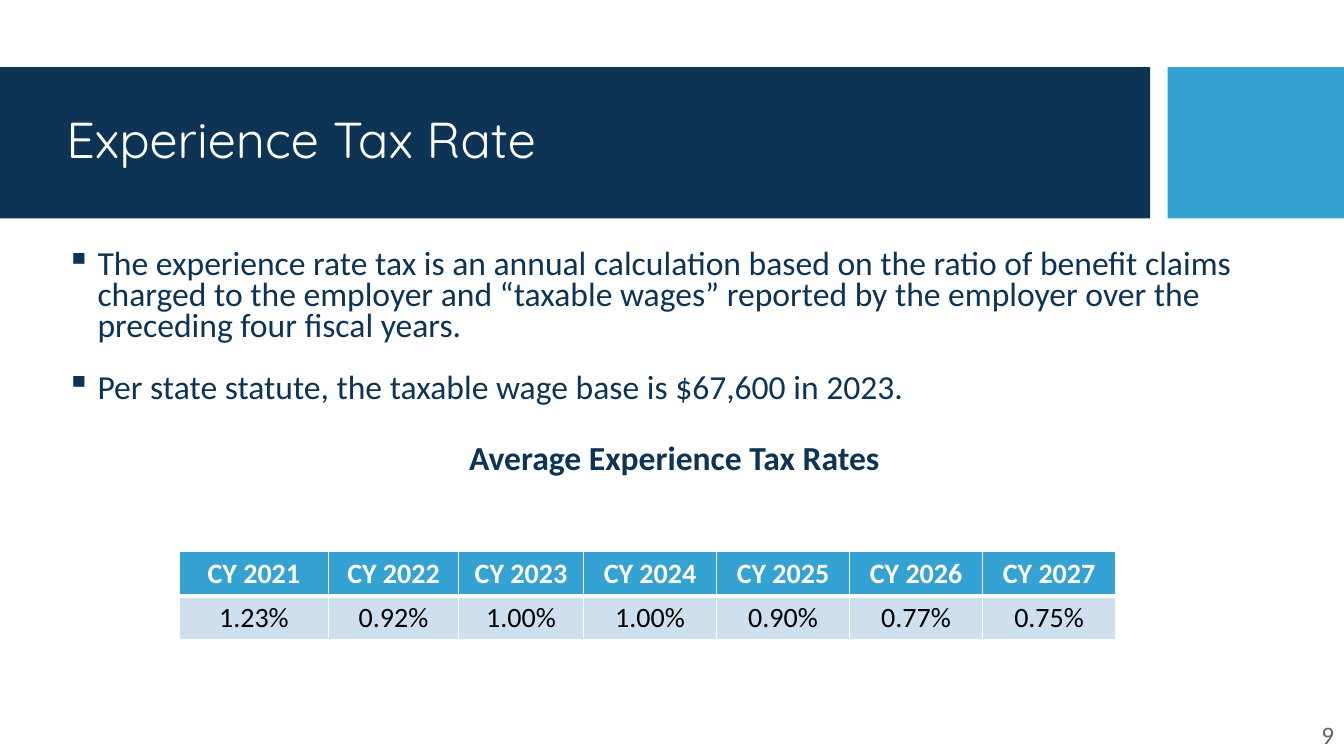
from lxml.etree import SubElement
from pptx import Presentation
from pptx.dml.color import RGBColor
from pptx.enum.shapes import MSO_SHAPE
from pptx.enum.text import MSO_ANCHOR, PP_ALIGN
from pptx.oxml.ns import qn
from pptx.util import Inches, Pt

NAVY = RGBColor(0x0D, 0x34, 0x55)
SKY = RGBColor(0x34, 0xA2, 0xD2)
PALE = RGBColor(0xCE, 0xE0, 0xEE)
GREY = RGBColor(0x66, 0x66, 0x66)
WHITE = RGBColor(0xFF, 0xFF, 0xFF)
BLACK = RGBColor(0x00, 0x00, 0x00)

COLUMNS, ROWS = 80, 45  # square grid, six units to the inch
LINE = Pt(22)
INDENT = Inches(0.31)

BULLETS = [
    "The experience rate tax is an annual calculation based on the ratio of benefit claims "
    "charged to the employer and “taxable wages” reported by the employer over the "
    "preceding four fiscal years.",
    "Per state statute, the taxable wage base is $67,600 in 2023.",
]
TABLE_HEADING = "Average Experience Tax Rates"
RATES = {
    "CY 2021": "1.23%", "CY 2022": "0.92%", "CY 2023": "1.00%", "CY 2024": "1.00%",
    "CY 2025": "0.90%", "CY 2026": "0.77%", "CY 2027": "0.75%",
}
RATE_WIDTHS = [8.88, 7.74, 7.44] + [7.92] * 4
RATE_HEIGHT = 2.64


def grid(*units):
    return [Inches(unit / 6) for unit in units]


def style(para, size, color, font="Calibri", bold=False, align=PP_ALIGN.LEFT):
    para.alignment = align
    for span in para.runs:
        span.font.name = font
        span.font.size = Pt(size)
        span.font.bold = bold
        span.font.color.rgb = color


def add_band(page, *place):
    *place, color = place
    band = page.shapes.add_shape(MSO_SHAPE.RECTANGLE, *grid(*place))
    band.shadow.inherit = False
    band.fill.solid()
    band.fill.fore_color.rgb = color
    band.line.fill.background()


def add_text(page, place, paragraphs, anchor=MSO_ANCHOR.TOP):
    """Add a wrapping text box and return its paragraphs."""
    frame = page.shapes.add_textbox(*grid(*place)).text_frame
    frame.word_wrap = True
    frame.vertical_anchor = anchor
    frame.text = "\n".join(paragraphs)
    return frame.paragraphs


def add_bullet(para):
    properties = para._p.get_or_add_pPr()
    properties.set("marL", str(INDENT))
    properties.set("indent", str(-INDENT))
    SubElement(properties, qn("a:buChar"), char="▪")


def add_body(page):
    paragraphs = add_text(page, (3.36, 14.7, 73.56, 15), BULLETS + [TABLE_HEADING])
    *bullets, heading = paragraphs
    for para in bullets:
        add_bullet(para)
        para.line_spacing = LINE
        style(para, 24, NAVY)
    style(heading, 24, NAVY, bold=True, align=PP_ALIGN.CENTER)
    for para in paragraphs[1:]:
        para.space_before = LINE


def set_borders(cell, bottom):
    properties = cell._tc.get_or_add_tcPr()
    for side, width in {"L": 1, "R": 1, "T": 1, "B": bottom}.items():
        line = SubElement(properties, qn(f"a:ln{side}"), w=str(Pt(width)))
        fill = SubElement(line, qn("a:solidFill"))
        SubElement(fill, qn("a:srgbClr"), val=str(WHITE))


def fill_cell(cell, text, fill, color, bold, bottom):
    set_borders(cell, bottom)
    cell.fill.solid()
    cell.fill.fore_color.rgb = fill
    cell.text_frame.text = text
    style(cell.text_frame.paragraphs[0], 20, color, bold=bold, align=PP_ALIGN.CENTER)


def add_rates(page):
    place = grid(10.68, 32.82, sum(RATE_WIDTHS), 2 * RATE_HEIGHT)
    table = page.shapes.add_table(2, len(RATES), *place).table
    for row in table.rows:
        row.height = grid(RATE_HEIGHT)[0]
    for index, (year, rate) in enumerate(RATES.items()):
        table.columns[index].width = grid(RATE_WIDTHS[index])[0]
        fill_cell(table.cell(0, index), year, SKY, WHITE, True, 3)
        rate_cell = table.cell(1, index)
        fill_cell(rate_cell, rate, PALE, BLACK, False, 1)
        rate_cell.vertical_anchor = MSO_ANCHOR.MIDDLE
        rate_cell.margin_left = rate_cell.margin_right = rate_cell.margin_top = Inches(0.01)
        rate_cell.margin_bottom = 0


def main():
    deck = Presentation()
    deck.slide_width, deck.slide_height = grid(COLUMNS, ROWS)
    page = deck.slides.add_slide(deck.slide_layouts[6])

    add_band(page, 0, 4, 68.46, 9, NAVY)
    add_band(page, 69.5, 4, 10.5, 9, SKY)
    title = add_text(page, (3.36, 4.92, 63.06, 7.08), ["Experience Tax Rate"], MSO_ANCHOR.MIDDLE)[0]
    title.line_spacing = 0.9
    style(title, 36, WHITE, font="Quicksand")
    number = add_text(page, (75.75, 42.54, 4.25, 2.46), ["9"])[0]
    style(number, 18, GREY, align=PP_ALIGN.RIGHT)
    add_body(page)
    add_rates(page)
    deck.save("out.pptx")


if __name__ == "__main__":
    main()
